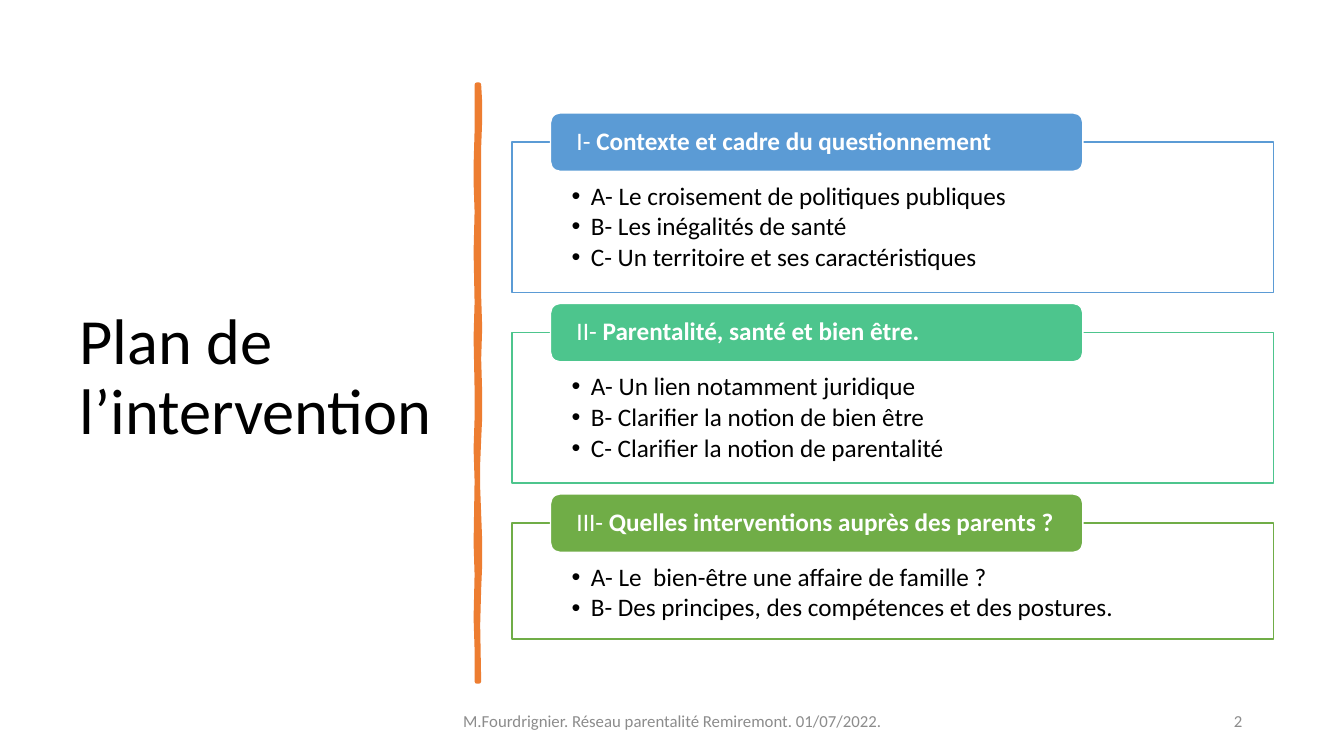
import pptx
import pptx.dml.color
import pptx.enum.shapes
import pptx.enum.text
import pptx.oxml.ns
import pptx.util
from lxml import etree

Inches = pptx.util.Inches
Pt = pptx.util.Pt
Kind = pptx.enum.shapes.MSO_SHAPE
Anchor = pptx.enum.text.MSO_ANCHOR
Align = pptx.enum.text.PP_ALIGN
qn = pptx.oxml.ns.qn


def tint(code):
    return pptx.dml.color.RGBColor.from_string(code)


def apply(item, values):
    for key, value in values.items():
        setattr(item, key, value)


class Deck:
    """Hold the text style and the current slide, and draw each kind of element."""

    def __init__(self, slide, face):
        self.slide = slide
        self.face = face

    def fill_text(self, shape, lines, size, color, frame, para, dot=False):
        body = shape.text_frame
        apply(body, {"word_wrap": True, **frame})
        for i, runs in enumerate(lines):
            line = body.paragraphs[0] if i == 0 else body.add_paragraph()
            apply(line, para)
            if dot:
                self.bullet(line)
            for text, bold in runs:
                run = line.add_run()
                run.text = text
                apply(run.font, {"name": self.face, "size": Pt(size), "bold": bold})
                run.font.color.rgb = tint(color)

    def bullet(self, line):
        props = line._p.get_or_add_pPr()
        props.set("marL", str(Inches(0.19)))
        props.set("indent", str(-Inches(0.19)))
        etree.SubElement(props, qn("a:buFont")).set("typeface", "Arial")
        etree.SubElement(props, qn("a:buChar")).set("char", "•")

    def paint(self, shape, fill, edge, width):
        shape.shadow.inherit = False
        shape.fill.solid()
        shape.fill.fore_color.rgb = tint(fill)
        shape.line.color.rgb = tint(edge)
        shape.line.width = Pt(width)

    def label(self, place, text, size, color, para):
        box = self.slide.shapes.add_textbox(*map(Inches, place))
        frame = {"vertical_anchor": Anchor.MIDDLE}
        self.fill_text(box, [[(text, False)]], size, color, frame, para)

    def block(self, kind, place, fill, edge):
        shape = self.slide.shapes.add_shape(kind, *map(Inches, place))
        self.paint(shape, fill, edge, 1)
        return shape

    def panel(self, top, high, color, items):
        box = self.block(Kind.RECTANGLE, (5.08, top, 7.55, high), "FFFFFF", color)
        shade = box._element.spPr.find(qn("a:solidFill"))[0]
        etree.SubElement(shade, qn("a:alpha")).set("val", "90000")
        frame = {
            "vertical_anchor": Anchor.TOP,
            "margin_left": Inches(0.59),
            "margin_right": Inches(0.59),
            "margin_top": Inches(0.41),
            "margin_bottom": Inches(0.14),
        }
        para = {"alignment": Align.LEFT, "level": 1, "line_spacing": 0.9, "space_after": Pt(2.5)}
        self.fill_text(box, [[(item, False)] for item in items], 18, "000000", frame, para, True)

    def tab(self, top, color, mark, title):
        box = self.block(Kind.ROUNDED_RECTANGLE, (5.46, top, 5.28, 0.58), color, "FFFFFF")
        frame = {
            "vertical_anchor": Anchor.MIDDLE,
            "margin_left": Inches(0.23),
            "margin_right": Inches(0.23),
            "margin_top": 0,
            "margin_bottom": 0,
        }
        para = {"alignment": Align.LEFT, "line_spacing": 0.9}
        self.fill_text(box, [[(mark, False), (title, True)]], 18, "FFFFFF", frame, para)

    def stroke(self, points, color, width):
        pen = self.slide.shapes.build_freeform(*points[0], scale=Inches(0.01))
        pen.add_line_segments(points[1:], close=True)
        self.paint(pen.convert_to_shape(), color, color, width)


RIGHT = [
    (475, 84), (476, 102), (476, 119), (475, 146), (475, 173), (475, 208),
    (475, 294), (476, 325), (475, 356), (476, 390), (476, 414), (475, 436),
    (474, 460), (474, 484), (475, 510), (476, 537), (476, 560), (475, 584),
    (474, 620), (475, 676),
]
LEFT = [
    (473, 676), (473, 644), (472, 613), (473, 570), (472, 539), (473, 477),
    (472, 445), (473, 415), (473, 386), (472, 335), (473, 300), (472, 250),
    (473, 210), (472, 181), (472, 164), (473, 130), (473, 84),
]
PARTS = [
    ("5B9BD5", 1.49, "I- ", "Contexte et cadre du questionnement", [
        "A- Le croisement de politiques publiques",
        "B- Les inégalités de santé",
        "C- Un territoire et ses caractéristiques",
    ]),
    ("4DC58D", 1.49, "II- ", "Parentalité, santé et bien être.", [
        "A- Un lien notamment juridique",
        "B- Clarifier la notion de bien être",
        "C- Clarifier la notion de parentalité",
    ]),
    ("70AD47", 1.15, "III- ", "Quelles interventions auprès des parents ?", [
        "A- Le  bien-être une affaire de famille ?",
        "B- Des principes, des compétences et des postures.",
    ]),
]
GAP = 0.4


def main():
    show = pptx.Presentation()
    apply(show, {"slide_width": Inches(13.33), "slide_height": Inches(7.5)})
    deck = Deck(show.slides.add_slide(show.slide_layouts[6]), "Calibri")
    deck.label((0.69, 0.7, 3.74, 6.11), "Plan de l’intervention", 46, "000000", {"line_spacing": 0.9})
    deck.stroke(RIGHT + LEFT, "ED7D31", 3.25)
    note = "M.Fourdrignier. Réseau parentalité Remiremont. 01/07/2022."
    deck.label((4.42, 6.95, 4.5, 0.4), note, 12, "8C8C8C", {"alignment": Align.CENTER, "space_after": Pt(6)})
    deck.label((9.42, 6.95, 3, 0.4), "2", 12, "8C8C8C", {"alignment": Align.RIGHT, "space_after": Pt(6)})
    top = 1.41
    for color, high, mark, title, items in PARTS:
        deck.panel(top, high, color, items)
        deck.tab(top - 0.29, color, mark, title)
        top += high + GAP
    show.save("out.pptx")


if __name__ == "__main__":
    main()
